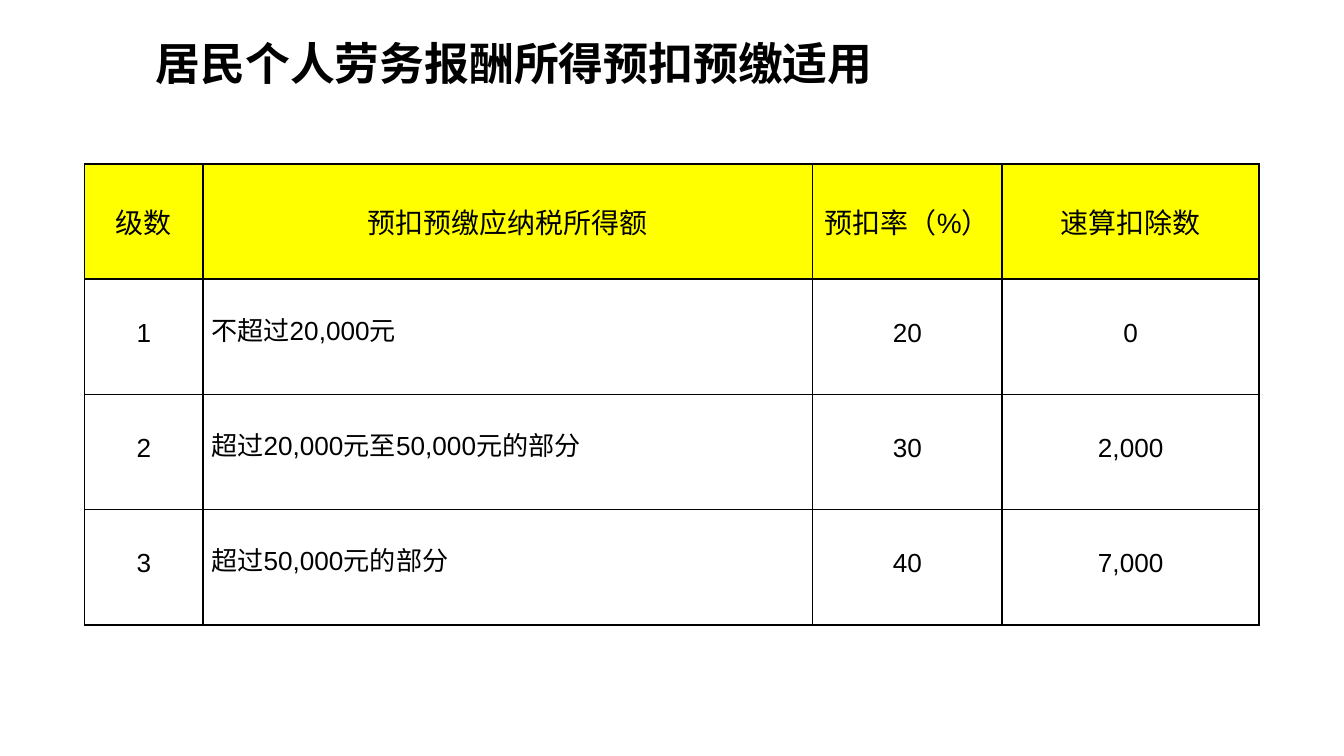
from lxml.etree import SubElement
from pptx import Presentation
from pptx.dml.color import RGBColor
from pptx.enum.text import MSO_ANCHOR as Anchor, PP_ALIGN as Align
from pptx.oxml.ns import qn
from pptx.util import Inches, Pt

WIDTH = 10
HEIGHT = WIDTH * 9 / 16
COLORS = {"ink": "000000", "header": "FFFF00"}
TITLE = "居民个人劳务报酬所得预扣预缴适用"
TITLE_BOX = (1.06, 0.14, 7.89, 0.65)
TABLE_BOX = (0.63, 1.22, 8.74, 3.43)
COLUMN_WIDTHS = (0.88, 4.53, 1.41, 1.91)
ROWS = (
    ("级数", "预扣预缴应纳税所得额", "预扣率（%）", "速算扣除数"),
    ("1", "不超过20,000元", "20", "0"),
    ("2", "超过20,000元至50,000元的部分", "30", "2,000"),
    ("3", "超过50,000元的部分", "40", "7,000"),
)


def write_text(frame, text, size, bold=False, align=Align.LEFT, spacing=None):
    """Write one formatted paragraph into a text frame."""
    frame.word_wrap = True
    para = frame.paragraphs[0]
    para.alignment = align
    if spacing:
        para.line_spacing = Pt(spacing)
    span = para.add_run()
    span.text = text
    span.font.name = "Arial"
    span.font.size = Pt(size)
    span.font.bold = bold
    span.font.color.rgb = RGBColor.from_string(COLORS["ink"])


def add_borders(cell):
    """Draw a thin line on every side of a cell."""
    properties = cell._tc.get_or_add_tcPr()
    for position, side in enumerate(("lnL", "lnR", "lnT", "lnB")):
        line = SubElement(properties, qn(f"a:{side}"), w=str(Pt(1)))
        fill = SubElement(line, qn("a:solidFill"))
        SubElement(fill, qn("a:srgbClr"), val=COLORS["ink"])
        properties.insert(position, line)


def add_title(page, box):
    """Place the bold heading in the given box."""
    frame = page.shapes.add_textbox(*map(Inches, box)).text_frame
    frame.vertical_anchor = Anchor.MIDDLE
    write_text(frame, TITLE, size=24, bold=True)


def fill_cell(cell, text, is_header, is_range):
    """Format one table cell and write its text."""
    cell.margin_left = cell.margin_right = Inches(0.06)
    cell.margin_top = cell.margin_bottom = 0
    cell.vertical_anchor = Anchor.MIDDLE
    if is_header:
        cell.fill.solid()
        cell.fill.fore_color.rgb = RGBColor.from_string(COLORS["header"])
        write_text(cell.text_frame, text, size=15, align=Align.CENTER)
    else:
        cell.fill.background()
        align = Align.JUSTIFY if is_range else Align.CENTER
        write_text(cell.text_frame, text, size=14, align=align, spacing=12)
    add_borders(cell)


def add_rate_table(page, box):
    """Place the withholding rate table in the given box."""
    left, top, width, height = map(Inches, box)
    table = page.shapes.add_table(
        len(ROWS), len(COLUMN_WIDTHS), left, top, width, height
    ).table
    table.horz_banding = False
    for column, share in zip(table.columns, COLUMN_WIDTHS):
        column.width = int(width * share / sum(COLUMN_WIDTHS))
    for row_index, row in enumerate(ROWS):
        for column_index, text in enumerate(row):
            cell = table.cell(row_index, column_index)
            fill_cell(cell, text, row_index == 0, column_index == 1)


def main():
    """Build the deck and save it."""
    deck = Presentation()
    deck.slide_width, deck.slide_height = Inches(WIDTH), Inches(HEIGHT)
    page = deck.slides.add_slide(deck.slide_layouts[6])
    add_title(page, TITLE_BOX)
    add_rate_table(page, TABLE_BOX)
    deck.save("out.pptx")


if __name__ == "__main__":
    main()
